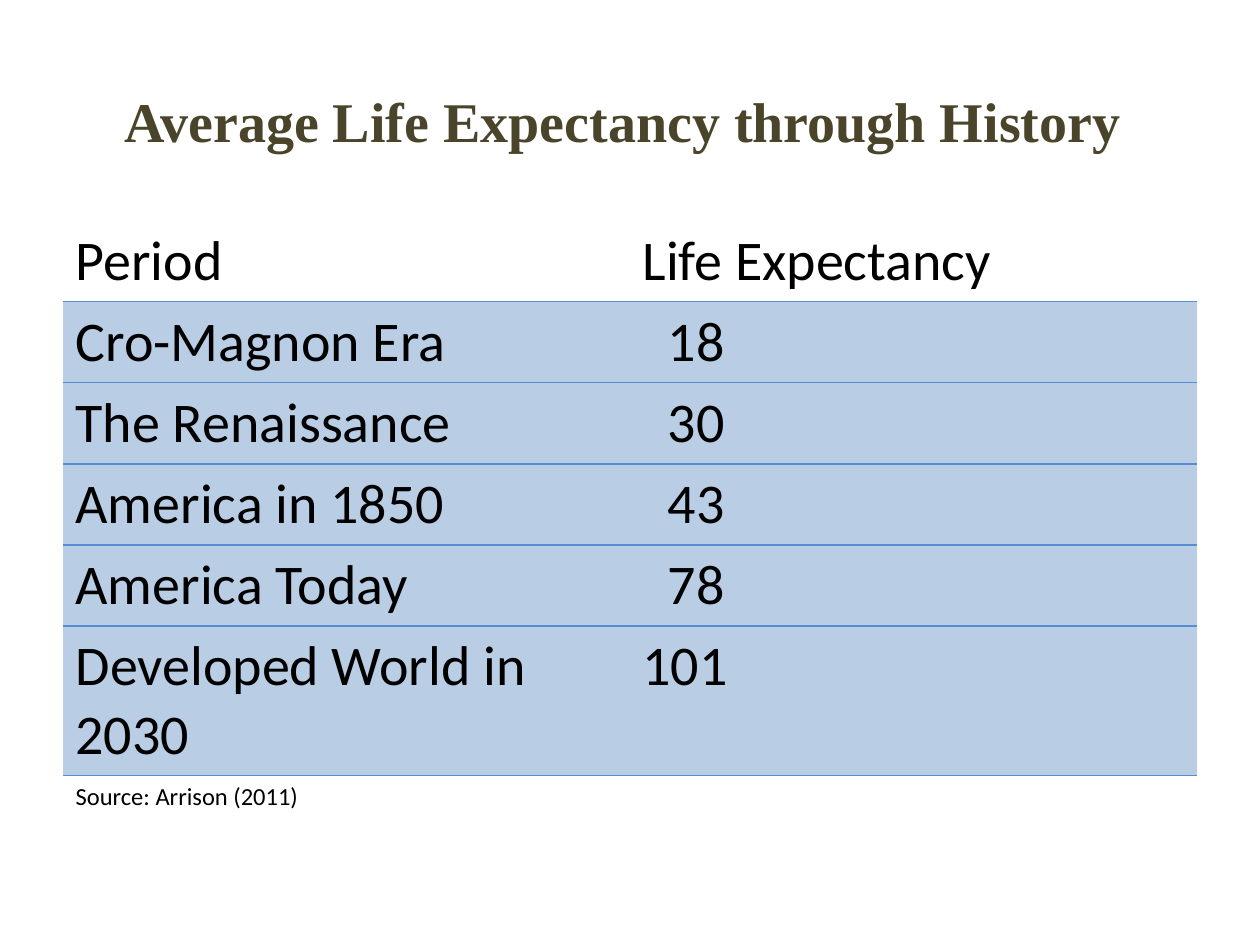
from dataclasses import dataclass

from lxml import etree
from pptx import Presentation
from pptx.dml.color import RGBColor
from pptx.enum import text
from pptx.oxml import ns
from pptx.util import Inches, Pt

OLIVE = RGBColor(0x4A, 0x45, 0x2A)
BLACK = RGBColor(0, 0, 0)
PALE = RGBColor(0xB9, 0xCD, 0xE5)
BLUE = RGBColor(0x55, 0x8E, 0xD5)
PLAIN_STYLE = "{2D5ABB26-0587-4C30-8999-92F81FD0307C}"

WIDTH, HEIGHT = Inches(10), Inches(7.5)
EDGE = WIDTH // 20
ROW = Inches(0.41)
PAD, DIGIT = Inches(0.1), Inches(0.2)


@dataclass
class Row:
    period: str
    years: str
    size: int = 32
    body: bool = True


ROWS = [
    Row("Period", "Life Expectancy", body=False),
    Row("Cro-Magnon Era", "18"),
    Row("The Renaissance", "30"),
    Row("America in 1850", "43"),
    Row("America Today", "78"),
    Row("Developed World in 2030", "101"),
    Row("Source: Arrison (2011)", "", size=14, body=False),
]


def add_run(para, words: str, font: str, size: int, color: RGBColor, bold=False) -> None:
    run = para.add_run()
    run.text = words
    run.font.name = font
    run.font.size = Pt(size)
    run.font.bold = bold
    run.font.color.rgb = color


def add_rule(cell, side: str) -> None:
    """Draw a border on one side of a cell: lnT is the top, lnB the bottom."""
    line = etree.Element(ns.qn(f"a:{side}"), w=str(Pt(1)))
    fill = etree.SubElement(line, ns.qn("a:solidFill"))
    etree.SubElement(fill, ns.qn("a:srgbClr"), val=str(BLUE))
    cell._tc.get_or_add_tcPr().insert(0, line)


def fill_cell(cell, words: str, row: Row) -> None:
    if row.body:
        cell.fill.solid()
        cell.fill.fore_color.rgb = PALE
    else:
        cell.fill.background()
    if words:
        add_run(cell.text_frame.paragraphs[0], words, "Calibri", row.size, BLACK)
    # Two-digit ages line up with the three-digit one.
    cell.margin_left = PAD + (DIGIT if len(words) == 2 else 0)


def add_title(slide) -> None:
    title = slide.shapes.title
    title.left, title.top = EDGE, Inches(0.33)
    title.width, title.height = WIDTH - 2 * EDGE, HEIGHT // 6
    frame = title.text_frame
    frame.vertical_anchor = text.MSO_ANCHOR.MIDDLE
    para = frame.paragraphs[0]
    para.alignment = text.PP_ALIGN.CENTER
    add_run(para, "Average Life Expectancy through History ",
            "Times New Roman", 32, OLIVE, bold=True)


def add_ages(slide) -> None:
    table = slide.shapes.add_table(
        len(ROWS), 2, EDGE, Inches(1.75), WIDTH - 2 * EDGE, ROW * len(ROWS)).table
    table.first_row = table.horz_banding = False
    table._tbl.tblPr.find(ns.qn("a:tableStyleId")).text = PLAIN_STYLE
    last = len(ROWS) - 1
    for i, row in enumerate(ROWS):
        table.rows[i].height = ROW
        for cell, words in zip(table.rows[i].cells, (row.period, row.years)):
            fill_cell(cell, words, row)
            if i < last:
                add_rule(cell, "lnB")
            if i > 0:
                add_rule(cell, "lnT")


def main() -> None:
    deck = Presentation()
    deck.slide_width, deck.slide_height = WIDTH, HEIGHT
    slide = deck.slides.add_slide(deck.slide_layouts[5])
    add_title(slide)
    add_ages(slide)
    deck.save("out.pptx")


if __name__ == "__main__":
    main()
